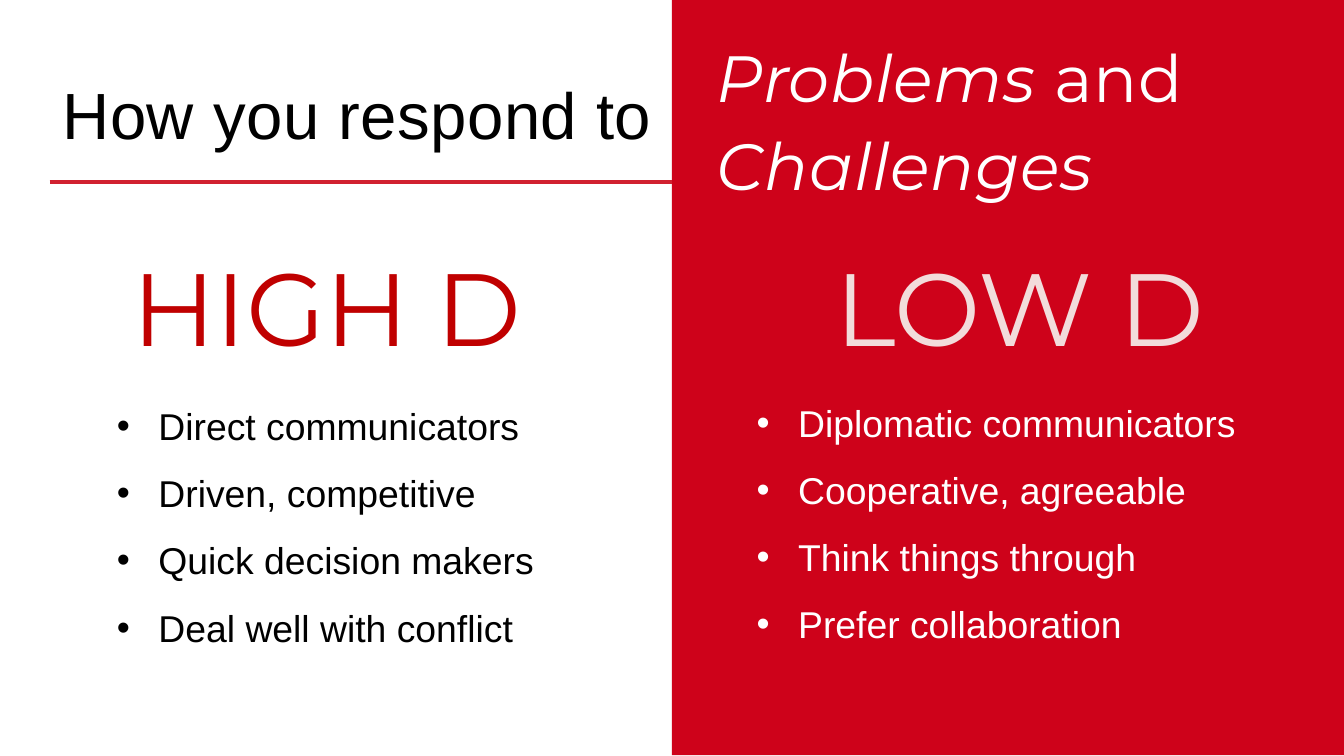
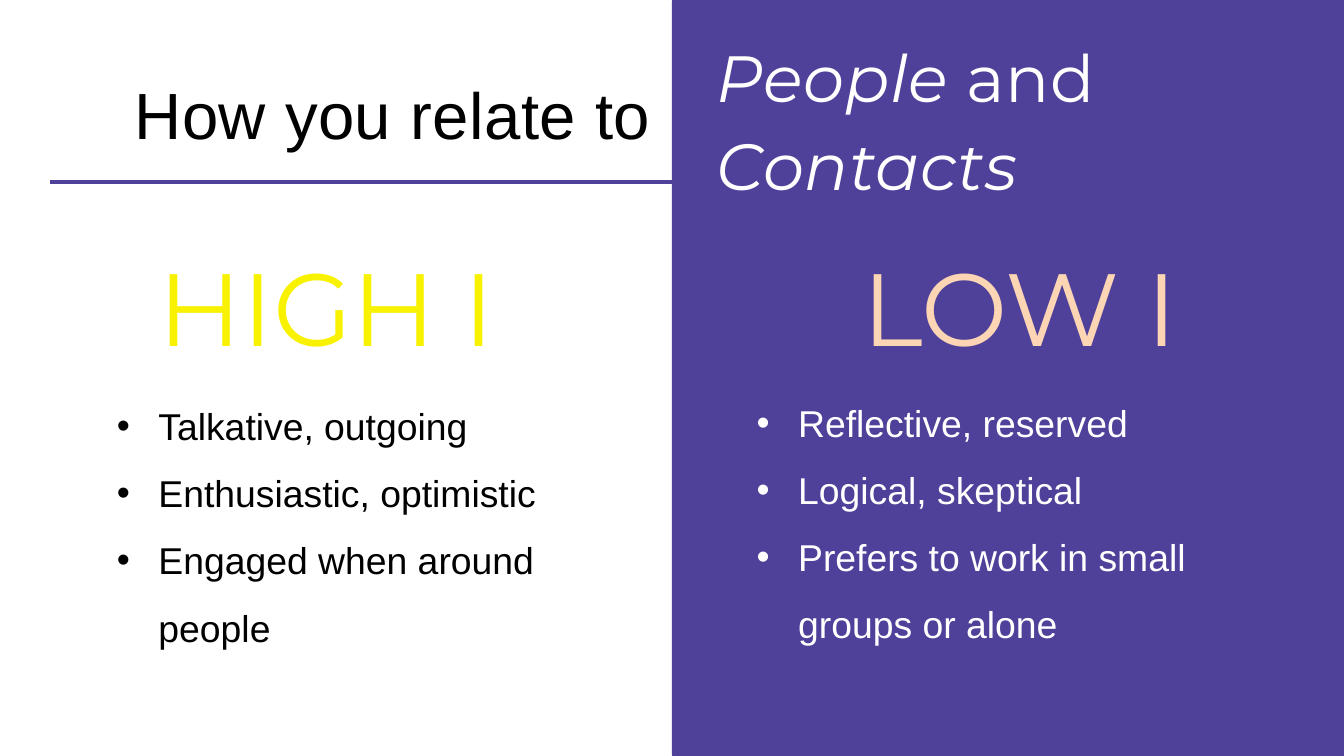
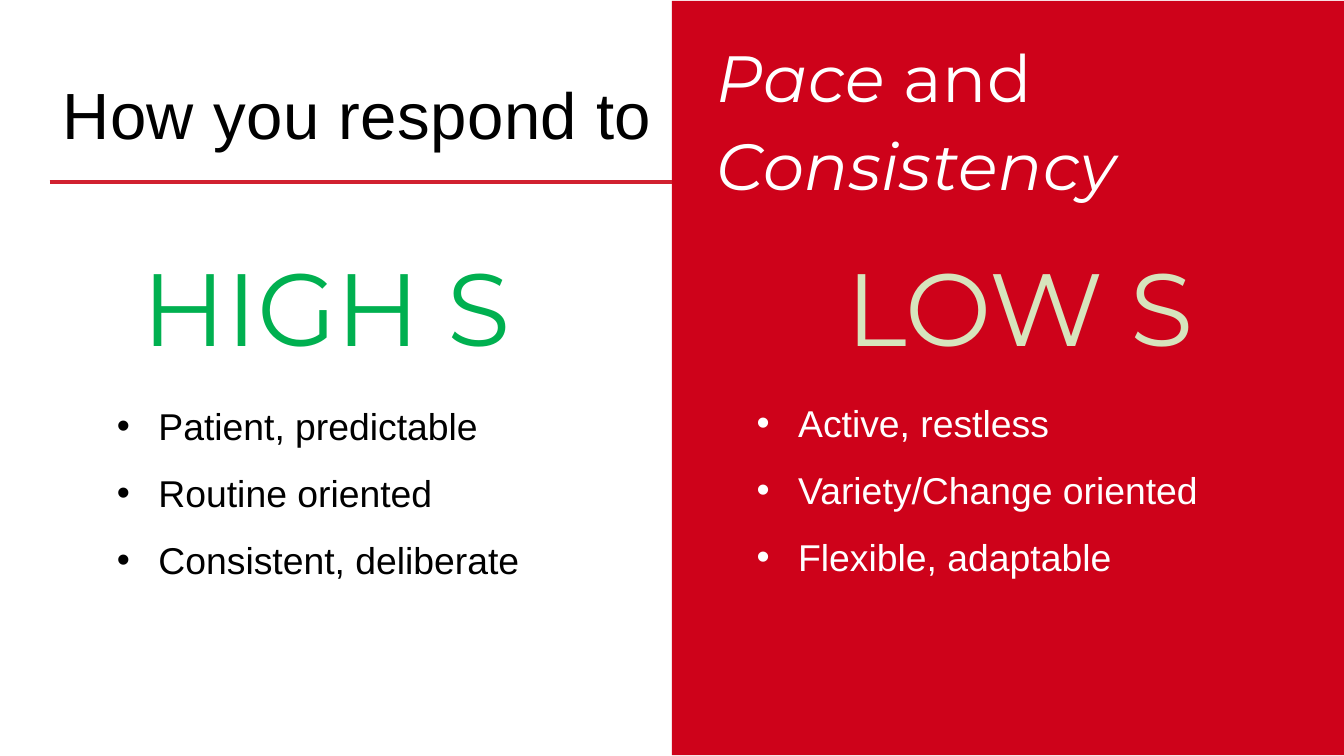
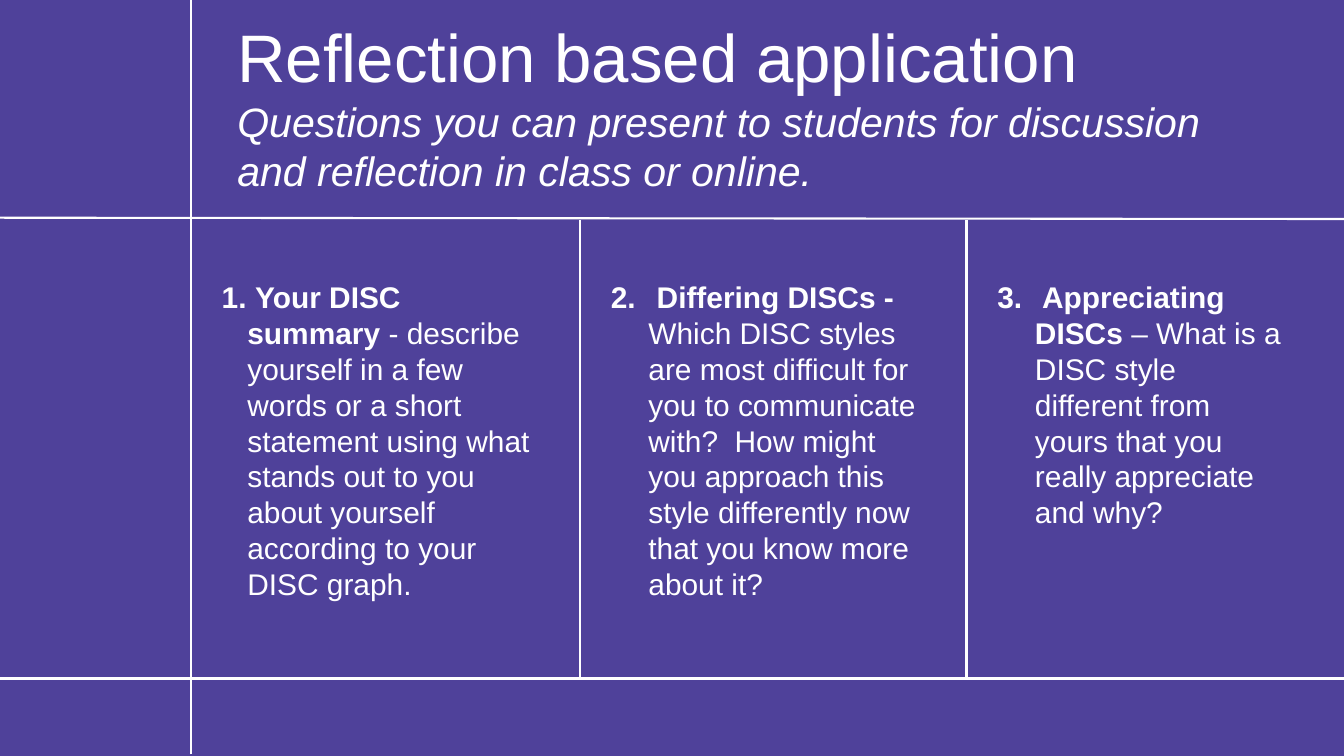
from lxml import etree
from pptx import Presentation
from pptx.dml.color import RGBColor
from pptx.enum.shapes import MSO_CONNECTOR, MSO_SHAPE
from pptx.enum.text import MSO_ANCHOR, MSO_AUTO_SIZE, PP_ALIGN
from pptx.oxml.ns import qn
from pptx.util import Cm, Pt

LEFT, CENTER = PP_ALIGN.LEFT, PP_ALIGN.CENTER
TOP = MSO_ANCHOR.TOP
GROW = MSO_AUTO_SIZE.SHAPE_TO_FIT_TEXT
RECT = MSO_SHAPE.RECTANGLE
STRAIGHT = MSO_CONNECTOR.STRAIGHT

WHITE, BLACK = "FFFFFF", "000000"
RED, ROSE, PURPLE = "CE021A", "D12130", "4F419A"
SANS, DISPLAY = "Arial", "Montserrat"
WIDE, HIGH = 50.8, 28.58
HALF = WIDE / 2

STYLES = [
    {
        "title": "How you respond to", "title_box": (2.36, 2.95, 23.27, 2.82),
        "topic": ("Problems", "Challenges"),
        "panel": RED, "rule": ROSE, "edge": None, "top": -0.53,
        "heads": (("HIGH D", "C00000"), ("LOW D", "F2DCDB")),
        "traits": (
            ["Direct communicators", "Driven, competitive",
             "Quick decision makers", "Deal well with conflict"],
            ["Diplomatic communicators", "Cooperative, agreeable",
             "Think things through", "Prefer collaboration"],
        ),
        "left_wide": 15.85, "list_high": 9.93,
    },
    {
        "title": "How you relate to", "title_box": (5.08, 2.95, 20.57, 2.82),
        "topic": ("People", "Contacts"),
        "panel": PURPLE, "rule": PURPLE, "edge": PURPLE, "top": 0.03,
        "heads": (("HIGH I", "F8F200"), ("LOW I", "FCD5B5")),
        "traits": (
            ["Talkative, outgoing", "Enthusiastic, optimistic",
             "Engaged when around people"],
            ["Reflective, reserved", "Logical, skeptical",
             "Prefers to work in small groups or alone"],
        ),
        "left_wide": 18.44, "list_high": 9.93,
    },
    {
        "title": "How you respond to", "title_box": (2.36, 2.95, 23.27, 2.82),
        "topic": ("Pace", "Consistency"),
        "panel": RED, "rule": ROSE, "edge": None, "top": 0.03,
        "heads": (("HIGH S", "00B050"), ("LOW S", "D7E4BD")),
        "traits": (
            ["Patient, predictable", "Routine oriented", "Consistent, deliberate"],
            ["Active, restless", "Variety/Change oriented", "Flexible, adaptable"],
        ),
        "left_wide": 15.85, "list_high": 7.37,
    },
]

REFLECT = (
    "Reflection based application",
    "Questions you can present to students for discussion and reflection "
    "in class or online.",
)
ASKS = [
    (" Your DISC summary ",
     "- describe yourself in a few words or a short statement using what "
     "stands out to you about yourself according to your DISC graph.",
     0.97, 11.96, 12.32),
    (" Differing DISCs - ",
     "Which DISC styles are most difficult for you to communicate with?  How "
     "might you approach this style differently now that you know more about it?",
     1.42, 11.96, 12.32),
    (" Appreciating DISCs ",
     "– What is a DISC style different from yours that you really appreciate "
     "and why?",
     1.42, 10.8, 9.58),
]
COLUMNS = (7.21, 21.92, 36.53)
GAP = 1.17


def rgb(code):
    return RGBColor.from_string(code)


def place(shape, box):
    shape.left, shape.top, shape.width, shape.height = map(Cm, box)


def prepare(shape):
    frame = shape.text_frame
    frame.margin_left = frame.margin_right = 0
    frame.margin_top = frame.margin_bottom = 0
    frame.word_wrap = True
    frame.vertical_anchor = TOP
    frame.auto_size = GROW
    return frame


def add_title(slide, box):
    place(slide.shapes.title, box)
    return prepare(slide.shapes.title)


def add_text(slide, box):
    return prepare(slide.shapes.add_textbox(*map(Cm, box)))


def write(para, runs, size, color, face=SANS, align=LEFT, lead=None, track=0):
    for text, traits in runs:
        run = para.add_run()
        run.text = text
        for name, value in traits.items():
            setattr(run.font, name, value)
    para.alignment = align
    if lead:
        para.line_spacing = lead
    font = para.font
    font.size, font.name = Pt(size), face
    font.color.rgb = rgb(color)
    if track:
        font._rPr.set("spc", str(track))


def mark(para, indent, tag, **attrs):
    props = para._p.get_or_add_pPr()
    props.set("marL", str(Cm(indent)))
    props.set("indent", str(-Cm(indent)))
    etree.SubElement(props, qn("a:buFont")).set("typeface", SANS)
    bullet = etree.SubElement(props, qn(tag))
    for name, value in attrs.items():
        bullet.set(name, value)


def add_rule(slide, ends, color, weight):
    rule = slide.shapes.add_connector(STRAIGHT, *map(Cm, ends))
    rule.line.color.rgb = rgb(color)
    rule.line.width = Pt(weight)
    etree.SubElement(rule._element.spPr, qn("a:effectLst"))


def add_panel(slide, style):
    top = style["top"]
    panel = slide.shapes.add_shape(
        RECT, *map(Cm, (HALF, top, 25.48, 28.55 - top)))
    panel.shadow.inherit = False
    panel.fill.solid()
    panel.fill.fore_color.rgb = rgb(style["panel"])
    if style["edge"]:
        panel.line.color.rgb = rgb(style["edge"])
        panel.line.width = Pt(0.75)
    else:
        panel.line.fill.background()


def add_list(slide, box, items, color):
    frame = add_text(slide, box)
    for i, item in enumerate(items):
        para = frame.add_paragraph() if i else frame.paragraphs[0]
        mark(para, 1.57, "a:buChar", char="•")
        write(para, [(item, {})], 40, color, lead=1.5)


def build_style(slide, style):
    title = add_title(slide, style["title_box"])
    write(title.paragraphs[0], [(style["title"], {})], 70, BLACK,
          lead=Pt(79.4), track=60)
    add_panel(slide, style)

    first, last = style["topic"]
    topic = add_text(slide, (27.1, 1.02, 21.41, 6.63))
    write(topic.paragraphs[0],
          [(first, {"italic": True}), (" and ", {"italic": False}),
           (last, {"italic": True})],
          70, WHITE, DISPLAY, lead=Pt(94.5), track=70)

    for x, (head, color) in zip((3.99, 30.2), style["heads"]):
        frame = add_text(slide, (x, 9.68, 16.71, 4.24))
        write(frame.paragraphs[0], [(head, {})], 110, color, DISPLAY,
              CENTER, Pt(118.8))

    spots = ((4.42, 14.4, style["left_wide"], BLACK),
             (28.6, 14.27, 19.05, WHITE))
    for (x, y, wide, color), items in zip(spots, style["traits"]):
        add_list(slide, (x, y, wide, style["list_high"]), items, color)
    add_rule(slide, (1.88, 6.88, HALF, 6.88), style["rule"], 3.75)


def build_reflect(slide):
    slide.background.fill.solid()
    slide.background.fill.fore_color.rgb = rgb(PURPLE)
    title = add_title(slide, (8.97, 0.58, 36.55, 6.83))
    head, sub = REFLECT
    write(title.paragraphs[0], [(head, {})], 72, WHITE)
    write(title.add_paragraph(), [(sub, {"italic": True})], 44, WHITE)

    edge, *inner = COLUMNS
    rules = [(edge, 28.52, edge, 0), (0, 8.23, 51.31, 8.28),
             (0, 25.65, 51.31, 25.65)]
    rules += [(x, 25.63, x, 8.31) for x in inner]
    for ends in rules:
        add_rule(slide, ends, WHITE, 2.25)

    for i, (x, ask) in enumerate(zip(COLUMNS, ASKS), 1):
        lead, body, indent, wide, high = ask
        para = add_text(slide, (x + GAP, 10.54, wide, high)).paragraphs[0]
        mark(para, indent, "a:buAutoNum", type="arabicPeriod", startAt=str(i))
        write(para, [(lead, {"bold": True}), (body, {"bold": False})], 32, WHITE)


def main():
    deck = Presentation()
    deck.slide_width, deck.slide_height = Cm(WIDE), Cm(HIGH)
    layout = deck.slide_layouts[5]
    for style in STYLES:
        build_style(deck.slides.add_slide(layout), style)
    build_reflect(deck.slides.add_slide(layout))
    deck.save("out.pptx")


if __name__ == "__main__":
    main()
